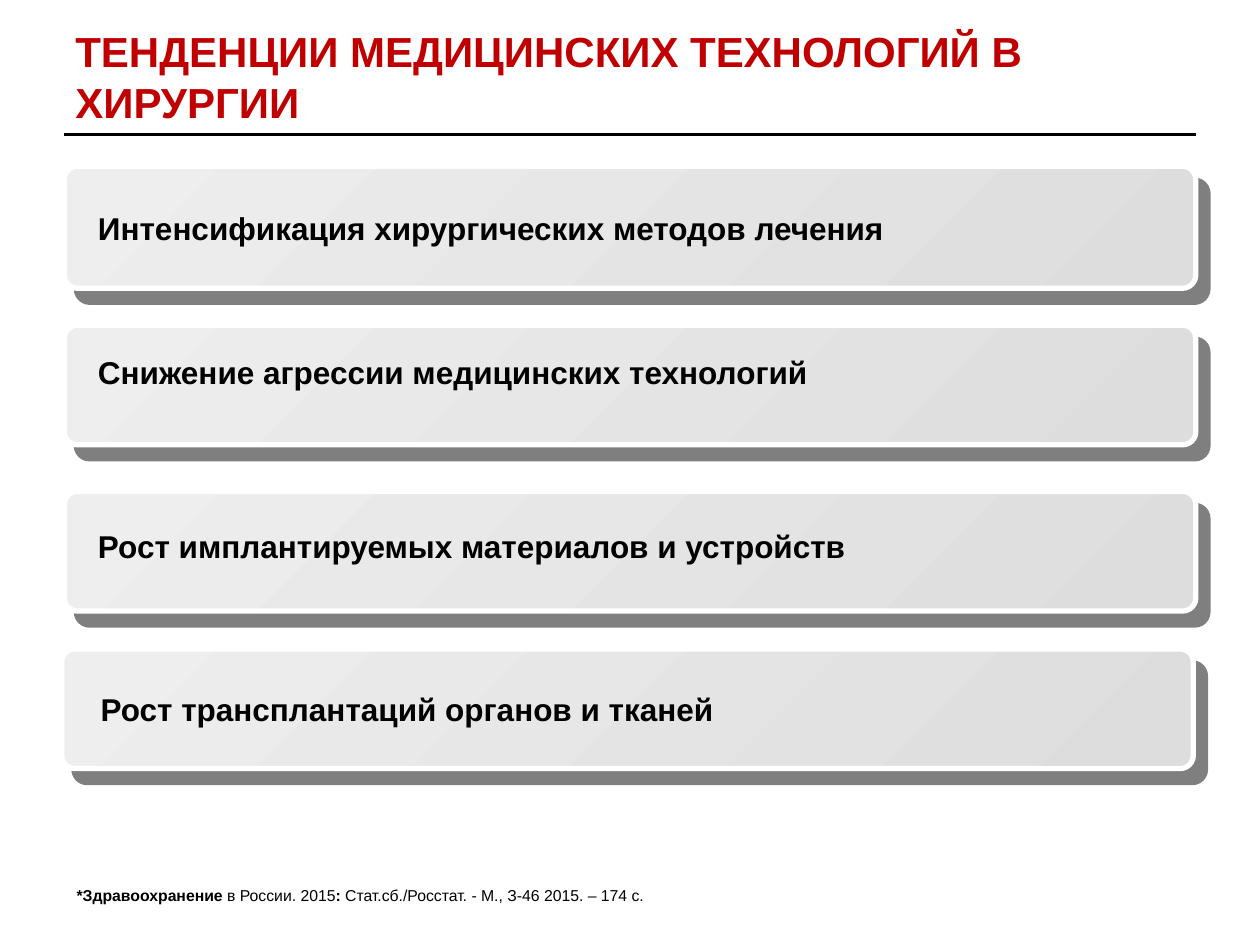
from lxml import etree
from pptx import Presentation
from pptx.dml.color import RGBColor
from pptx.enum import shapes, text
from pptx.oxml import ns
from pptx.util import Pt

COLORS = {
    "title": "C00000",
    "text": "000000",
    "card_light": "EEEEEE",
    "card_dark": "DDDDDD",
    "border": "FFFFFF",
    "shadow": "000000",
}
FONT = "Arial"
CARDS = [
    ("Интенсификация хирургических методов лечения", (36.7, 95, 646.6, 69.8), (12.2, 20.9)),
    ("Снижение агрессии медицинских технологий", (36.7, 185.8, 646.6, 68.4), (12.2, 12.2)),
    ("Рост имплантируемых материалов и устройств", (36.7, 280.8, 646.6, 68.4), (12.2, 16.6)),
    ("Рост трансплантаций органов и тканей", (35.3, 370.8, 646.6, 68.4), (15.1, 20.2)),
]
SOURCE = [
    ("*Здравоохранение ", True),
    ("в России. 2015", False),
    (": ", True),
    ("Стат.сб./Росстат. - М., З-46 2015. – 174 с.", False),
]


def color(name):
    """Return the named palette colour."""
    return RGBColor.from_string(COLORS[name])


def add_run(p, content, size, fill="text", bold=True):
    """Append a formatted run to a paragraph."""
    r = p.add_run()
    r.text = content
    r.font.name, r.font.size, r.font.bold = FONT, Pt(size), bold
    r.font.color.rgb = color(fill)


def add_text(s, box, runs, size, fill="text", anchor=text.MSO_ANCHOR.TOP):
    """Place a wrapped text box holding one paragraph of (text, bold) runs."""
    tf = s.shapes.add_textbox(*map(Pt, box)).text_frame
    tf.word_wrap = True
    tf.vertical_anchor = anchor
    for content, bold in runs:
        add_run(tf.paragraphs[0], content, size, fill, bold)


def add_shadow(sp, distance, angle, alpha):
    """Give a shape a hard offset shadow."""
    sp.shadow.inherit = False
    effects = sp._element.spPr.find(ns.qn("a:effectLst"))
    shadow = etree.SubElement(effects, ns.qn("a:outerShdw"), blurRad="0",
                              dist=str(Pt(distance)), dir=str(angle * 60000),
                              algn="ctr", rotWithShape="0")
    clr = etree.SubElement(shadow, ns.qn("a:srgbClr"), val=COLORS["shadow"])
    etree.SubElement(clr, ns.qn("a:alpha"), val=str(alpha * 1000))


def add_header(s, box):
    """Place the title and the rule below it."""
    x, y, w, h = box
    add_text(s, (x - 0.7, y, 684, 43.9),
             [("ТЕНДЕНЦИИ МЕДИЦИНСКИХ ТЕХНОЛОГИЙ В ХИРУРГИИ", True)],
             24, "title", text.MSO_ANCHOR.MIDDLE)
    rule = s.shapes.add_connector(shapes.MSO_CONNECTOR.STRAIGHT,
                                  Pt(x), Pt(y + h), Pt(x + w), Pt(y + h))
    rule.line.color.rgb = color("text")
    rule.line.width = Pt(1.5)
    etree.SubElement(rule._element.spPr, ns.qn("a:effectLst"))


def add_card(s, box, label, offset):
    """Place a shaded rounded card and its label at an offset within it."""
    sp = s.shapes.add_shape(shapes.MSO_SHAPE.ROUNDED_RECTANGLE, *map(Pt, box))
    sp.adjustments[0] = 0.11
    sp.fill.gradient()
    sp.fill.gradient_angle = 315
    for stop, name in zip(sp.fill.gradient_stops, ("card_light", "card_dark")):
        stop.color.rgb = color(name)
    sp.line.color.rgb = color("border")
    sp.line.width = Pt(3)
    add_shadow(sp, 10.6, 49, 50)
    dx, dy = offset
    add_text(s, (box[0] + dx, box[1] + dy, 618.5, 28.8), [(label, True)], 18)


def main():
    """Build and save the slide."""
    prs = Presentation()
    prs.slide_width, prs.slide_height = Pt(720), Pt(540)
    s = prs.slides.add_slide(prs.slide_layouts[6])
    add_header(s, (36.7, 21.6, 646.6, 55.4))
    add_text(s, (36.7, 502.6, 646.6, 18), SOURCE, 9)
    for label, box, offset in CARDS:
        add_card(s, box, label, offset)
    prs.save("out.pptx")


if __name__ == "__main__":
    main()
